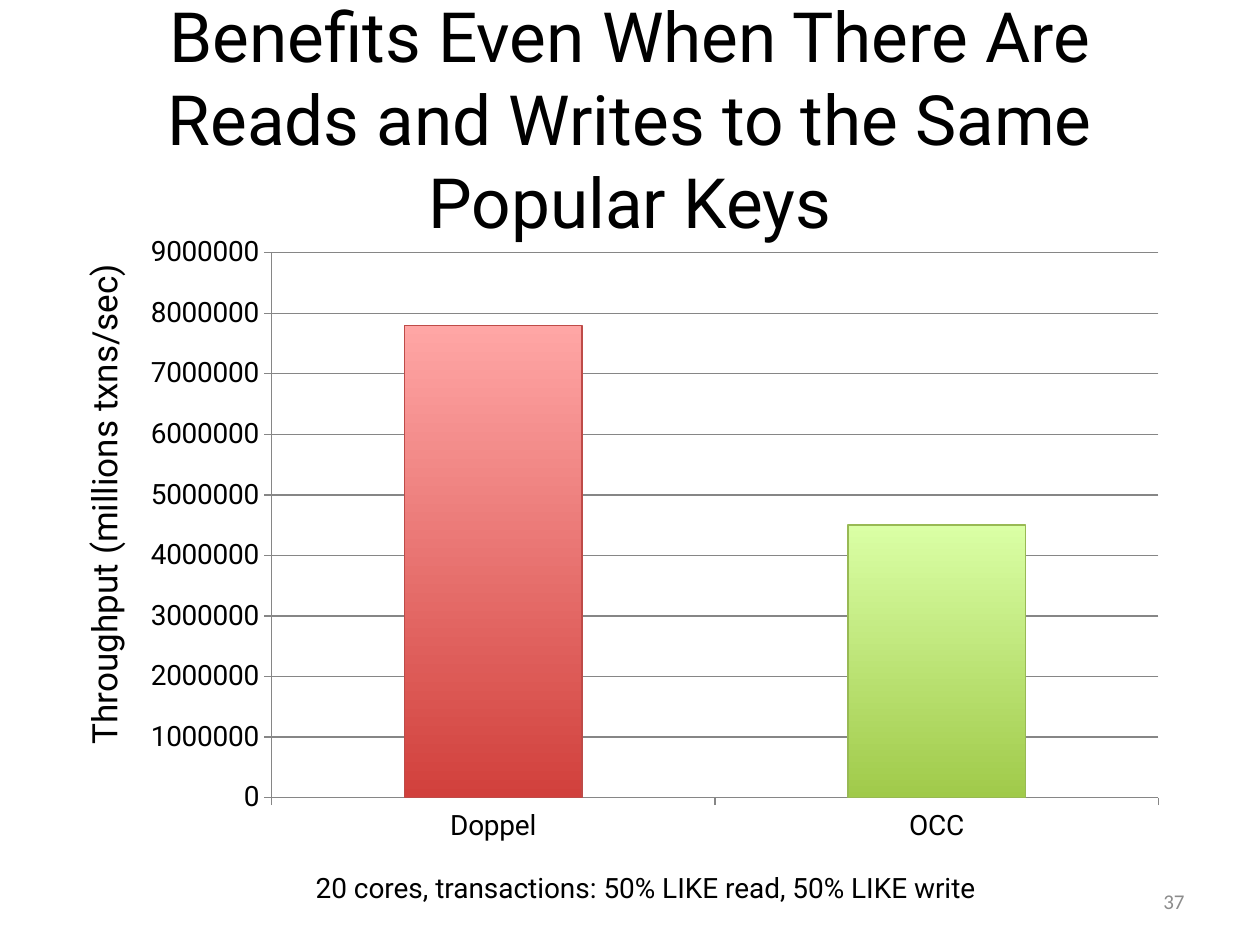
from pptx import Presentation
from pptx.chart.data import CategoryChartData
from pptx.dml.color import RGBColor
from pptx.enum.chart import XL_CHART_TYPE, XL_TICK_MARK
from pptx.enum.text import MSO_ANCHOR, PP_ALIGN
from pptx.util import Inches, Pt

COLUMNS = XL_CHART_TYPE.COLUMN_CLUSTERED
OUTSIDE, NO_TICK = XL_TICK_MARK.OUTSIDE, XL_TICK_MARK.NONE
MIDDLE = MSO_ANCHOR.MIDDLE
CENTER, RIGHT = PP_ALIGN.CENTER, PP_ALIGN.RIGHT

BLACK = RGBColor(0x00, 0x00, 0x00)
PAGE_GRAY = RGBColor(0x8C, 0x8C, 0x8C)
AXIS_GRAY = RGBColor(0x86, 0x86, 0x86)
RED = (RGBColor(0xD1, 0x40, 0x3C), RGBColor(0xFF, 0xA6, 0xA5), RGBColor(0xBE, 0x4B, 0x48))
GREEN = (RGBColor(0xA0, 0xCA, 0x4A), RGBColor(0xDA, 0xFF, 0xA5), RGBColor(0x98, 0xB9, 0x54))


class SlideBuilder:
    font_name = "Roboto"
    grid_columns = 20
    grid_rows = 15

    def __init__(self, deck):
        self.deck = deck
        self.slide = deck.slides.add_slide(deck.slide_layouts[6])

    def place(self, column, row, columns, rows):
        cell_width = self.deck.slide_width / self.grid_columns
        cell_height = self.deck.slide_height / self.grid_rows
        return (round(column * cell_width), round(row * cell_height),
                round(columns * cell_width), round(rows * cell_height))

    def style_font(self, font, size, color=BLACK, name=None):
        font.name = name or self.font_name
        font.size = Pt(size)
        font.color.rgb = color

    def text(self, area, words, size, color=BLACK, align=CENTER, name=None,
             wrap=True, rotation=0):
        box = self.slide.shapes.add_textbox(*self.place(*area))
        box.rotation = rotation
        frame = box.text_frame
        frame.word_wrap = wrap
        frame.vertical_anchor = MIDDLE
        frame.text = words
        para = frame.paragraphs[0]
        para.alignment = align
        self.style_font(para.runs[0].font, size, color, name)

    def style_line(self, line, color):
        line.color.rgb = color
        line.width = Pt(0.75)

    def column_chart(self, area, bars, size, maximum, step):
        data = CategoryChartData(number_format="General")
        data.categories = [label for label, value, colors in bars]
        data.add_series("Series 1", [value for label, value, colors in bars])
        chart = self.slide.shapes.add_chart(COLUMNS, *self.place(*area), data).chart
        chart.has_legend = False
        chart.has_title = False
        self.style_font(chart.font, size)

        for axis in (chart.category_axis, chart.value_axis):
            axis.major_tick_mark = OUTSIDE
            axis.minor_tick_mark = NO_TICK
            self.style_line(axis.format.line, AXIS_GRAY)
        scale = chart.value_axis
        scale.minimum_scale = 0
        scale.maximum_scale = maximum
        scale.major_unit = step
        scale.has_major_gridlines = True
        self.style_line(scale.major_gridlines.format.line, AXIS_GRAY)

        plot = chart.plots[0]
        plot.gap_width = 150
        plot.vary_by_categories = False
        for index, (label, value, colors) in enumerate(bars):
            bottom, top, outline = colors
            bar = plot.series[0].points[index].format
            bar.fill.gradient()
            bar.fill.gradient_angle = 90
            for stop, color in zip(bar.fill.gradient_stops, (bottom, top)):
                stop.color.rgb = color
            self.style_line(bar.line, outline)


def main():
    deck = Presentation()
    deck.slide_width, deck.slide_height = Inches(10), Inches(7.5)
    page = SlideBuilder(deck)
    page.text((1, 0.62, 18, 2.5),
              "Benefits Even When There Are Reads and Writes to the Same Popular Keys", 39.6)
    page.text((14.34, 13.9, 4.66, 0.8), "37", 12, PAGE_GRAY, RIGHT, "Calibri")
    page.column_chart((2.06, 3.56, 16.66, 10),
                      [("Doppel", 7800000, RED), ("OCC", 4500000, GREEN)],
                      16, 9000000, 1000000)
    page.text((-2.56, 7, 8.4, 2), "Throughput (millions txns/sec)", 20,
              wrap=False, rotation=270)
    page.text((3.42, 13.58, 13.66, 1),
              "20 cores, transactions: 50% LIKE read, 50% LIKE write", 16, wrap=False)
    deck.save("out.pptx")


if __name__ == "__main__":
    main()
